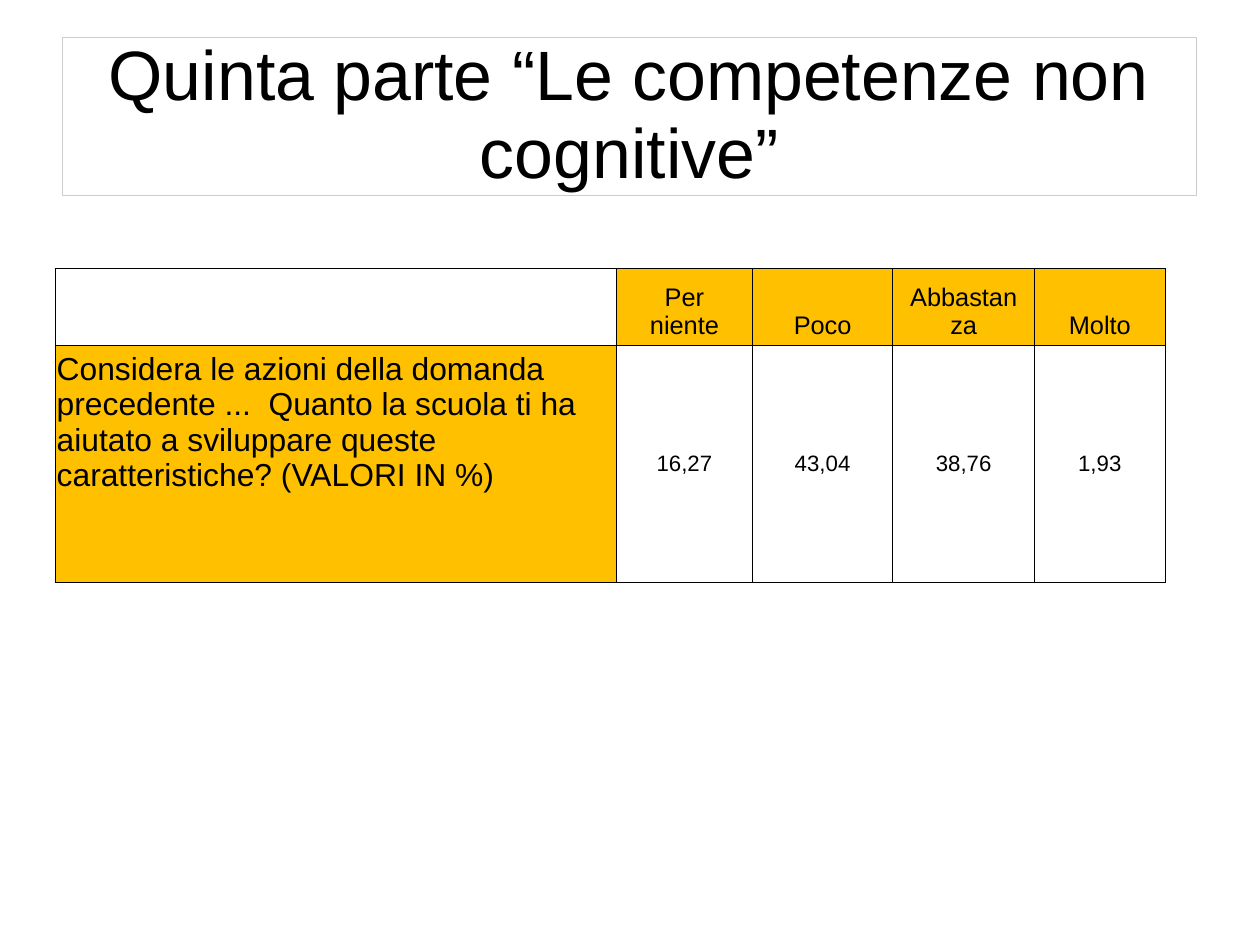
from dataclasses import dataclass

from lxml import etree
from pptx import Presentation
from pptx.dml.color import RGBColor
from pptx.enum.shapes import MSO_SHAPE
from pptx.enum.text import MSO_ANCHOR, PP_ALIGN
from pptx.oxml.ns import qn
from pptx.slide import Slide
from pptx.table import _Cell
from pptx.text.text import _Paragraph
from pptx.util import Cm, Pt

RECTANGLE = MSO_SHAPE.RECTANGLE
TOP, MIDDLE, BOTTOM = MSO_ANCHOR.TOP, MSO_ANCHOR.MIDDLE, MSO_ANCHOR.BOTTOM
LEFT, CENTER = PP_ALIGN.LEFT, PP_ALIGN.CENTER


@dataclass(frozen=True)
class Theme:
    font: str = "Arial"
    ink: str = "000000"
    paper: str = "FFFFFF"
    frame: str = "CCCCCC"
    amber: str = "FFC000"
    title_size: int = 44
    question_size: int = 20
    answer_size: int = 16
    value_size: int = 14
    line_width: float = 0.75


THEME = Theme()


@dataclass(frozen=True)
class CellStyle:
    size: int
    align: PP_ALIGN
    anchor: MSO_ANCHOR
    margin_x: float
    margin_y: float
    fill: str | None = None


ANSWER = CellStyle(THEME.answer_size, CENTER, BOTTOM, 0.25, 0.13, THEME.amber)
QUESTION = CellStyle(THEME.question_size, LEFT, TOP, 0.03, 0.13, THEME.amber)
VALUE = CellStyle(THEME.value_size, CENTER, MIDDLE, 0.25, 0.25)

TITLE = "Quinta parte “Le competenze non cognitive”"
QUESTION_TEXT = (
    "Considera le azioni della domanda precedente ...  Quanto la scuola ti ha "
    "aiutato a sviluppare queste caratteristiche? (VALORI IN %)"
)
RESULTS = {"Per niente": "16,27", "Poco": "43,04", "Abbastanza": "38,76", "Molto": "1,93"}
COLUMN_WIDTHS = (12.47, 3.02, 3.12, 3.15, 2.9)
ROW_HEIGHTS = (1.71, 5.26)


def set_format(target: object, values: dict[str, object]) -> None:
    for name, value in values.items():
        setattr(target, name, value)


def write(para: _Paragraph, text: str, size: int, align: PP_ALIGN) -> None:
    para.alignment = align
    span = para.add_run()
    span.text = text
    set_format(span.font, {"name": THEME.font, "size": Pt(size)})
    span.font.color.rgb = RGBColor.from_string(THEME.ink)


def add_borders(cell: _Cell) -> None:
    properties = cell._tc.get_or_add_tcPr()
    for side in ("a:lnL", "a:lnR", "a:lnT", "a:lnB"):
        line = etree.SubElement(properties, qn(side), w=str(int(Pt(THEME.line_width))))
        fill = etree.SubElement(line, qn("a:solidFill"))
        etree.SubElement(fill, qn("a:srgbClr"), val=THEME.ink)


def paint_cell(cell: _Cell, color: str | None) -> None:
    add_borders(cell)
    if color:
        cell.fill.solid()
        cell.fill.fore_color.rgb = RGBColor.from_string(color)
    else:
        cell.fill.background()


def fill_cell(cell: _Cell, text: str, style: CellStyle) -> None:
    margin_x, margin_y = Cm(style.margin_x), Cm(style.margin_y)
    set_format(cell, {
        "margin_left": margin_x, "margin_right": margin_x,
        "margin_top": margin_y, "margin_bottom": margin_y,
        "vertical_anchor": style.anchor,
    })
    paint_cell(cell, style.fill)
    write(cell.text_frame.paragraphs[0], text, style.size, style.align)


def add_title(page: Slide) -> None:
    box = page.shapes.add_shape(RECTANGLE, Cm(1.39), Cm(0.84), Cm(25.2), Cm(3.5))
    box.shadow.inherit = False
    box.fill.solid()
    box.fill.fore_color.rgb = RGBColor.from_string(THEME.paper)
    box.line.color.rgb = RGBColor.from_string(THEME.frame)
    box.line.width = Pt(THEME.line_width)
    set_format(box.text_frame, {
        "margin_left": 0, "margin_right": 0, "margin_top": 0, "margin_bottom": 0,
        "vertical_anchor": MIDDLE, "word_wrap": True,
    })
    para = box.text_frame.paragraphs[0]
    para.line_spacing = 0.93
    write(para, TITLE, THEME.title_size, CENTER)


def add_results(page: Slide) -> None:
    table = page.shapes.add_table(
        len(ROW_HEIGHTS), len(COLUMN_WIDTHS),
        Cm(1.23), Cm(5.97), Cm(sum(COLUMN_WIDTHS)), Cm(sum(ROW_HEIGHTS)),
    ).table
    set_format(table, {"first_row": False, "horz_banding": False})
    for column, width in zip(table.columns, COLUMN_WIDTHS):
        column.width = Cm(width)
    for row, height in zip(table.rows, ROW_HEIGHTS):
        row.height = Cm(height)

    paint_cell(table.cell(0, 0), None)
    fill_cell(table.cell(1, 0), QUESTION_TEXT, QUESTION)
    for index, (answer, value) in enumerate(RESULTS.items(), start=1):
        fill_cell(table.cell(0, index), answer, ANSWER)
        fill_cell(table.cell(1, index), value, VALUE)


def main() -> None:
    deck = Presentation()
    set_format(deck, {"slide_width": Cm(28), "slide_height": Cm(21)})
    page = deck.slides.add_slide(deck.slide_layouts[6])
    add_title(page)
    add_results(page)
    deck.save("out.pptx")


if __name__ == "__main__":
    main()
